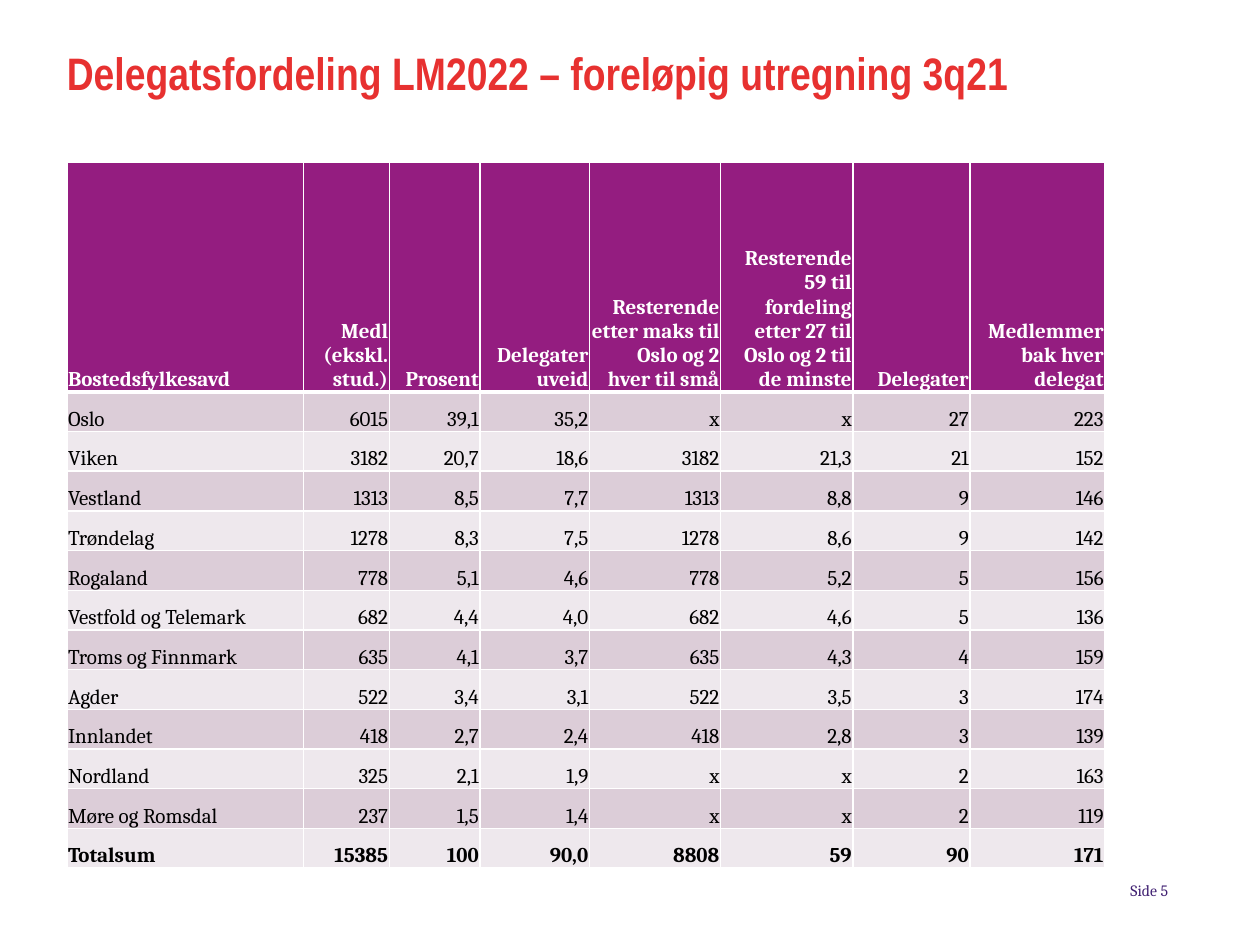
from pptx import Presentation
from pptx.dml.color import RGBColor as RGB
from pptx.enum.text import MSO_ANCHOR as Anchor, PP_ALIGN as Align
from pptx.oxml.ns import qn
from pptx.util import Inches, Pt
from lxml.etree import SubElement as Sub

# Content
TITLE = "Delegatsfordeling LM2022 – foreløpig utregning 3q21"
FOOT = "Side 5"
ROWS = [
    ("Bostedsfylkesavd", "Medl (ekskl. stud.)", "Prosent", "Delegater uveid",
     "Resterende etter maks til Oslo og 2 hver til små",
     "Resterende 59 til fordeling etter 27 til Oslo og 2 til de minste",
     "Delegater", "Medlemmer bak hver delegat"),
    ("Oslo", "6015", "39,1", "35,2", "x", "x", "27", "223"),
    ("Viken", "3182", "20,7", "18,6", "3182", "21,3", "21", "152"),
    ("Vestland", "1313", "8,5", "7,7", "1313", "8,8", "9", "146"),
    ("Trøndelag", "1278", "8,3", "7,5", "1278", "8,6", "9", "142"),
    ("Rogaland", "778", "5,1", "4,6", "778", "5,2", "5", "156"),
    ("Vestfold og Telemark", "682", "4,4", "4,0", "682", "4,6", "5", "136"),
    ("Troms og Finnmark", "635", "4,1", "3,7", "635", "4,3", "4", "159"),
    ("Agder", "522", "3,4", "3,1", "522", "3,5", "3", "174"),
    ("Innlandet", "418", "2,7", "2,4", "418", "2,8", "3", "139"),
    ("Nordland", "325", "2,1", "1,9", "x", "x", "2", "163"),
    ("Møre og Romsdal", "237", "1,5", "1,4", "x", "x", "2", "119"),
    ("Totalsum", "15385", "100", "90,0", "8808", "59", "90", "171"),
]
COLS = [1.88, 0.68, 0.72, 0.87, 1.04, 1.05, 0.93, 1.07]
LEFT, TOP, HIGH, HEAD = 0.53, 1.29, 5.6, 1.82
HEX = {"title": "E73130", "foot": "3F1F71", "head": "941D80", "odd": "DCCDD8",
       "even": "EEE8ED", "white": "FFFFFF", "black": "000000"}


def put(para, text, color, font, **form):
    run = para.add_run()
    run.text = text
    run.font.color.rgb = RGB.from_string(HEX[color])
    for key, val in font.items():
        setattr(run.font, key, val)
    for key, val in form.items():
        setattr(para, key, val)


def add_box(area, anchor):
    frame = slide.shapes.add_textbox(*map(Inches, area)).text_frame
    form = {"word_wrap": True, "vertical_anchor": anchor, "margin_left": 0,
            "margin_top": 0, "margin_right": 0, "margin_bottom": 0}
    for key, val in form.items():
        setattr(frame, key, val)
    return frame.paragraphs[0]


def add_edges(cell, sizes):
    props = cell._tc.get_or_add_tcPr()
    for side, size in zip("LRTB", sizes):
        line = Sub(props, qn(f"a:ln{side}"), w=str(Pt(size)))
        Sub(Sub(line, qn("a:solidFill")), qn("a:srgbClr"), val=HEX["white"])


deck = Presentation()
deck.slide_width, deck.slide_height = Inches(10), Inches(7.5)
slide = deck.slides.add_slide(deck.slide_layouts[6])

# Title and page number
put(add_box((LEFT, 0.39, 8.15, 0.81), Anchor.TOP), TITLE, "title",
    {"name": "Arial Narrow", "size": Pt(26), "bold": True}, line_spacing=Pt(29))
put(add_box((7.02, 6.99, 2.25, 0.15), Anchor.MIDDLE), FOOT, "foot",
    {"name": "Cambria", "size": Pt(9)}, alignment=Align.RIGHT, space_after=Pt(6))

# Table grid
table = slide.shapes.add_table(
    len(ROWS), len(COLS), *map(Inches, (LEFT, TOP, sum(COLS), HIGH))).table
for col, wide in zip(table.columns, COLS):
    col.width = Inches(wide)
step = (HIGH - HEAD) / (len(ROWS) - 1)
for r, row in enumerate(table.rows):
    row.height = Inches(step if r else HEAD)

# Table cells
pad = Inches(0.01)
CELL = {"vertical_anchor": Anchor.BOTTOM, "margin_left": pad, "margin_top": pad,
        "margin_right": pad, "margin_bottom": 0}
for r, texts in enumerate(ROWS):
    fill = "head" if r == 0 else "odd" if r % 2 else "even"
    font = {"name": "Cambria", "size": Pt(12), "bold": r in (0, len(ROWS) - 1)}
    for c, text in enumerate(texts):
        cell = table.cell(r, c)
        for key, val in CELL.items():
            setattr(cell, key, val)
        add_edges(cell, (1, 1, 3 if r == 1 else 1, 1 if r else 3))
        cell.fill.solid()
        cell.fill.fore_color.rgb = RGB.from_string(HEX[fill])
        put(cell.text_frame.paragraphs[0], text, "black" if r else "white", font,
            alignment=Align.RIGHT if c else Align.LEFT)

deck.save("out.pptx")
